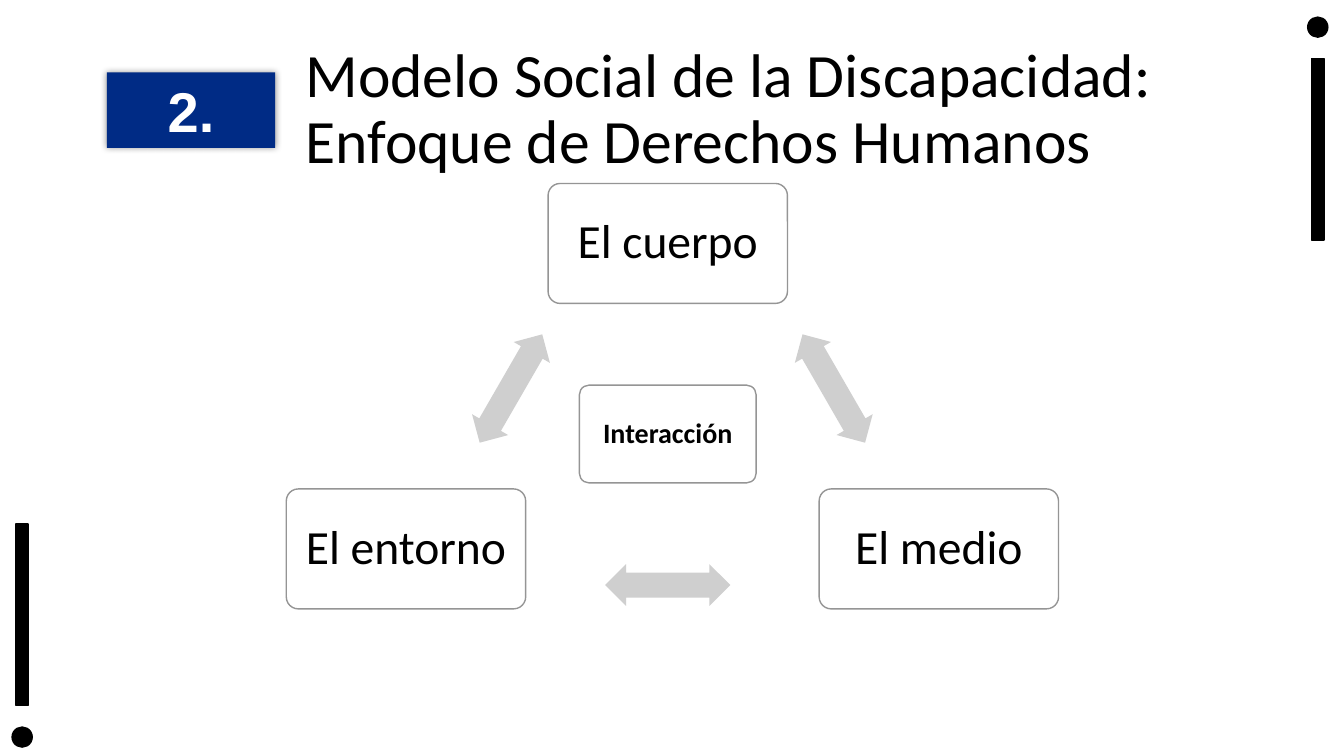
from lxml.etree import SubElement
from pptx import Presentation
from pptx.dml.color import RGBColor
from pptx.enum.shapes import MSO_SHAPE
from pptx.enum.text import MSO_ANCHOR, MSO_AUTO_SIZE, PP_ALIGN
from pptx.oxml.ns import qn
from pptx.util import Inches, Pt

WIDE, HIGH = Inches(13.33), Inches(7.5)
COLORS = {
    "black": "000000",
    "white": "FFFFFF",
    "navy": "002B85",
    "edge": "959595",
    "arrow": "CFCFCF",
}


def tint(name):
    return RGBColor.from_string(COLORS[name])


def area(left, top, width, height):
    return (WIDE * left / 100, HIGH * top / 100,
            WIDE * width / 100, HIGH * height / 100)


def part(box, left, top, width, height):
    x, y, w, h = box
    return (x + w * left / 100, y + h * top / 100,
            w * width / 100, h * height / 100)


def center(box, mid, row, width, height):
    return part(box, mid - width / 2, row - height / 2, width, height)


def draw(slide, kind, box, fill, line=None):
    shape = slide.shapes.add_shape(kind, *map(round, box))
    shape.shadow.inherit = False
    shape.fill.solid()
    shape.fill.fore_color.rgb = tint(fill)
    if line:
        shape.line.color.rgb = tint(line)
        shape.line.width = Pt(1)
    else:
        shape.line.fill.background()
    return shape


def write(shape, text, size, color="black", bold=False, font="Calibri",
          align=PP_ALIGN.CENTER, space=0.9, inset=(0.1, 0.05)):
    frame = shape.text_frame
    frame.word_wrap = True
    frame.auto_size = MSO_AUTO_SIZE.NONE
    frame.vertical_anchor = MSO_ANCHOR.MIDDLE
    frame.margin_left = frame.margin_right = Inches(inset[0])
    frame.margin_top = frame.margin_bottom = Inches(inset[1])
    para = frame.paragraphs[0]
    para.alignment = align
    para.line_spacing = space
    run = para.add_run()
    run.text = text
    run.font.name = font
    run.font.size = Pt(size)
    run.font.bold = bold
    run.font.color.rgb = tint(color)


def glow(shape):
    effects = shape._element.spPr.find(qn("a:effectLst"))
    shade = SubElement(effects, qn("a:outerShdw"), blurRad=str(Pt(5)),
                       dist="0", dir="0", algn="ctr", rotWithShape="0")
    color = SubElement(shade, qn("a:srgbClr"), val=COLORS["black"])
    SubElement(color, qn("a:alpha"), val="40000")


def mark(slide, box, flip=False):
    dot, bar = (91, 0) if flip else (0, 18.5)
    draw(slide, MSO_SHAPE.OVAL, part(box, 0, dot, 100, 9), "black", "black")
    draw(slide, MSO_SHAPE.RECTANGLE, part(box, 20, bar, 60, 81.5),
         "black", "black")


def header(slide, box):
    badge = draw(slide, MSO_SHAPE.RECTANGLE, part(box, 0, 24, 14.88, 51.7),
                 "navy")
    glow(badge)
    write(badge, "2.", 40, "white", True, "Arial", space=1)
    title = slide.shapes.title
    title.left, title.top, title.width, title.height = map(
        round, part(box, 16.67, 0, 83.33, 100))
    write(title, "Modelo Social de la Discapacidad: Enfoque de Derechos Humanos",
          44, align=PP_ALIGN.LEFT)


def node(slide, box, text, size, bold=False):
    shape = draw(slide, MSO_SHAPE.ROUNDED_RECTANGLE, box, "white", "edge")
    shape.adjustments[0] = 0.1
    write(shape, text, size, bold=bold, inset=(0.13, 0.13))


def cycle(slide, box):
    nodes = [
        ("El cuerpo", 49.4, 14.1),
        ("El medio", 84.5, 85.9),
        ("El entorno", 15.5, 85.9),
    ]
    arrows = [(70.9, 48.2, 60), (49.4, 94.4, 0), (29.1, 48.2, 300)]
    for text, mid, row in nodes:
        node(slide, center(box, mid, row, 31, 28.2), text, 34)
    for mid, row, turn in arrows:
        arrow = draw(slide, MSO_SHAPE.LEFT_RIGHT_ARROW,
                     center(box, mid, row, 16.2, 9.8), "arrow")
        arrow.adjustments[0] = 0.6
        arrow.adjustments[1] = 0.5
        arrow.rotation = turn
    node(slide, center(box, 49.4, 58.9, 22.9, 23), "Interacción", 20, True)


def main():
    deck = Presentation()
    deck.slide_width, deck.slide_height = WIDE, HIGH
    slide = deck.slides.add_slide(deck.slide_layouts[5])
    mark(slide, area(97.3, 2.27, 1.5, 29.5))
    mark(slide, area(0.9, 69.33, 1.5, 29.5), True)
    header(slide, area(7.95, 4.93, 84.17, 19.33))
    cycle(slide, area(21.3, 24.27, 57.46, 56.27))
    deck.save("out.pptx")


if __name__ == "__main__":
    main()
